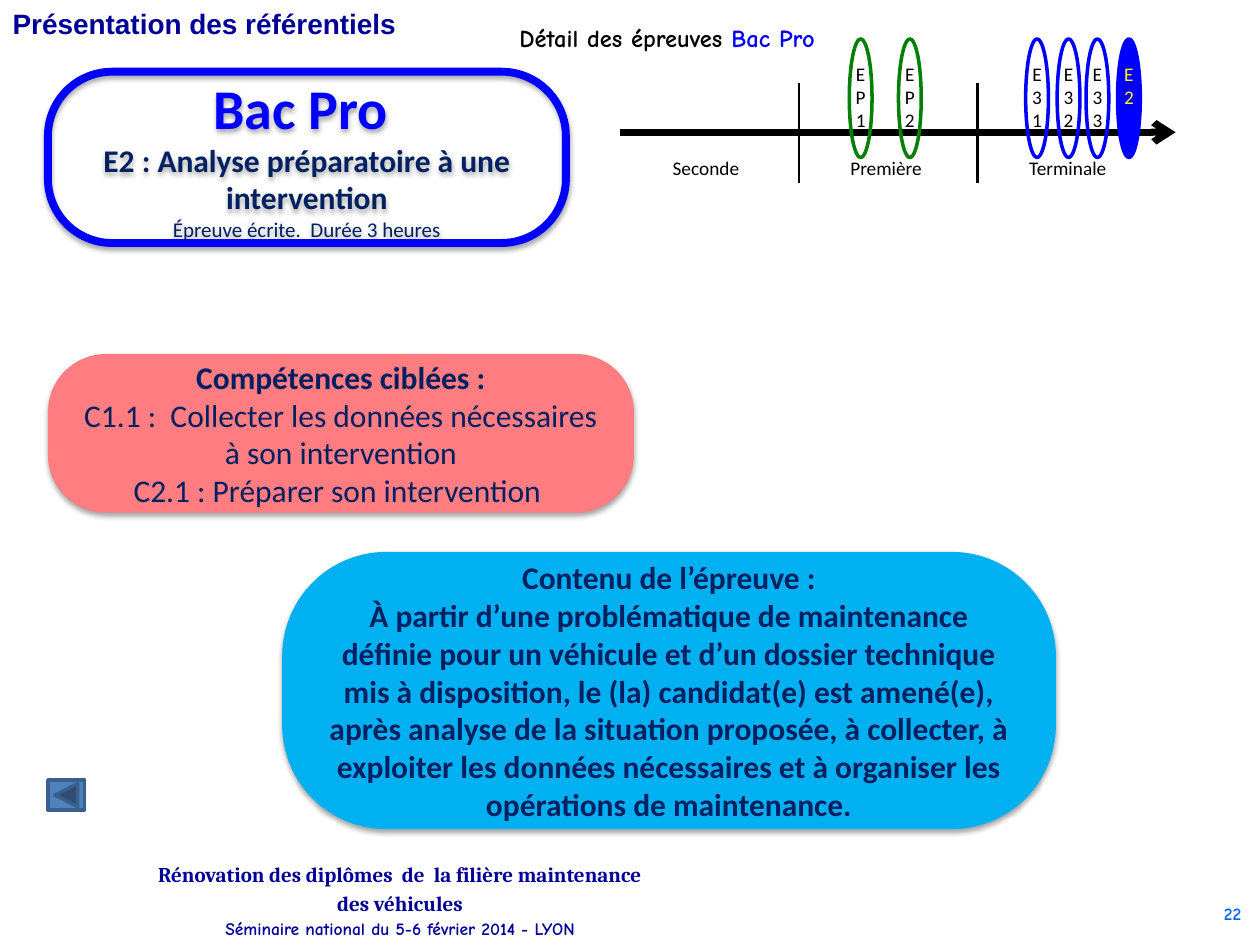
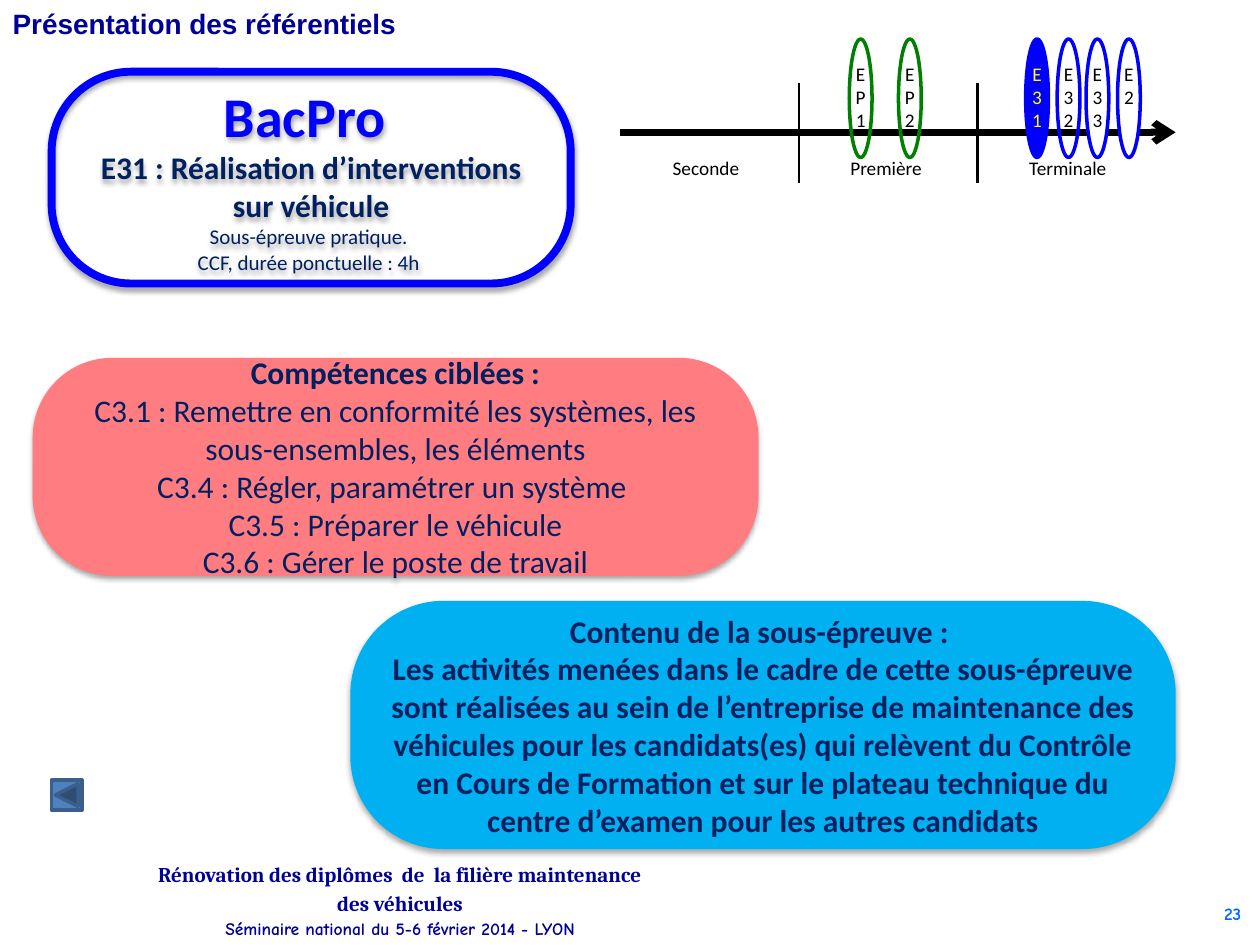
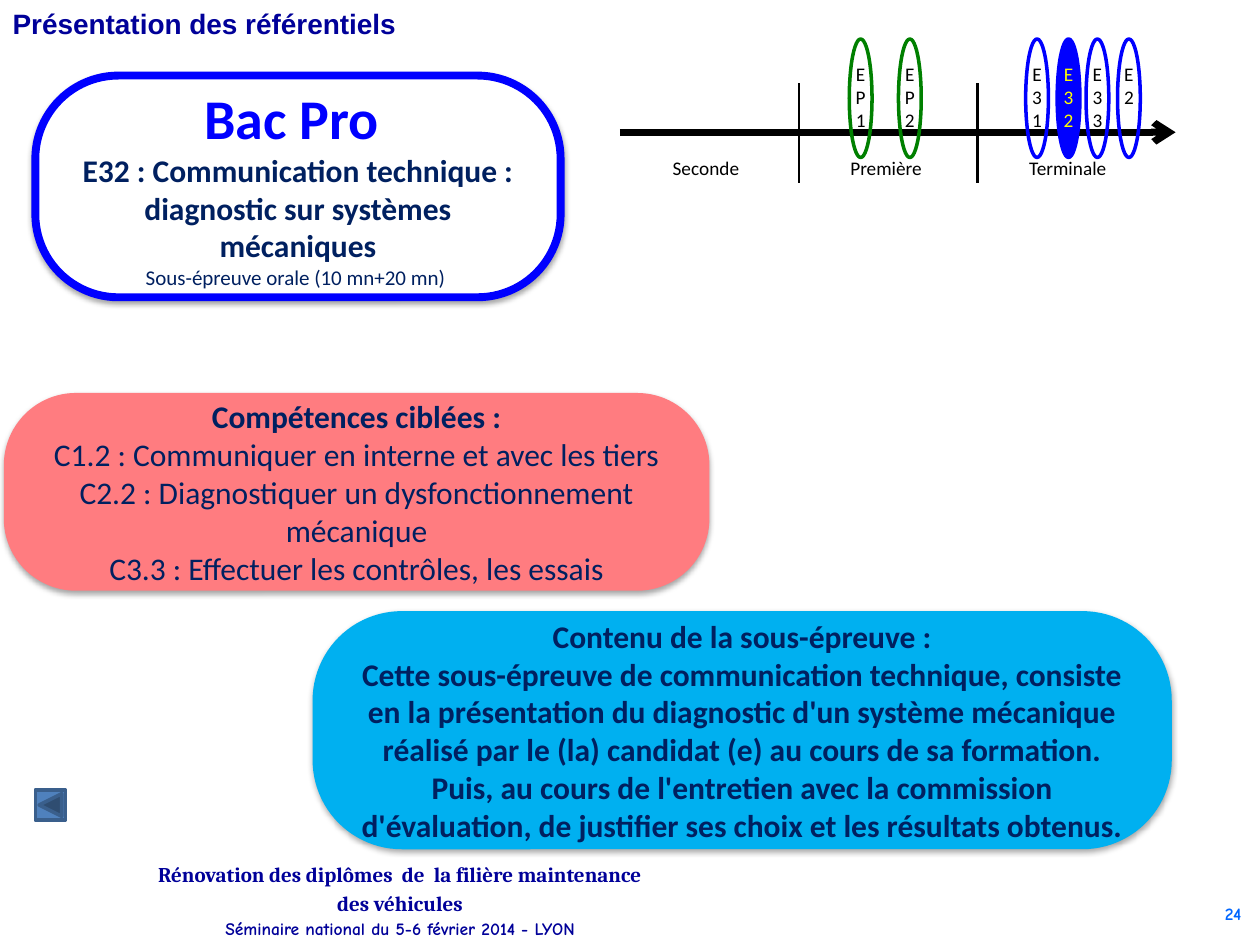
import pptx
import pptx.util
import pptx.dml.color
import pptx.enum.shapes
import pptx.enum.text
import pptx.oxml
import pptx.oxml.ns
from dataclasses import dataclass, replace

Pt = pptx.util.Pt
SHAPE = pptx.enum.shapes.MSO_SHAPE
ALIGN = pptx.enum.text.PP_ALIGN
ANCHOR = pptx.enum.text.MSO_ANCHOR


@dataclass(frozen=True)
class Style:
    size: float
    font: str
    color: str
    bold: bool = False


class Theme:
    blue, green, black, white = "0000FF", "008000", "000000", "FFFFFF"
    pink, cyan = "FF7C80", "00B0F0"
    button, button_line = "4F81BD", "3A5F8C"
    title = Style(16, "Arial", "000099", True)
    footer = Style(12, "Cambria", "000099", True)
    footer_date = Style(10, "Comic Neue", "000099", True)
    number = Style(10, "Comic Neue", "0066FF", True)
    diploma = Style(32, "Calibri", blue, True)
    strong = Style(18, "Calibri", "002060", True)
    plain = replace(strong, bold=False)
    small = replace(plain, size=12)
    label = Style(11, "Calibri", black)
    selected = replace(label, color="FFFF00")
    detail = Style(14, "Comic Neue", black, True)
    detail_blue = replace(detail, color=blue)


SHADOW = (
    '<a:effectLst %s><a:outerShdw blurRad="40000" dist="23000" dir="5400000" rotWithShape="0">'
    '<a:srgbClr val="000000"><a:alpha val="35000"/></a:srgbClr></a:outerShdw></a:effectLst>'
    % pptx.oxml.ns.nsdecls("a"))

# Exams on the timeline: name, left, outline
EXAMS = [("E2", 638.6, Theme.blue), ("E31", 586.1, Theme.blue),
         ("E32", 604.1, Theme.blue), ("E33", 620.6, Theme.blue),
         ("EP2", 513.4, Theme.green), ("EP1", 485.3, Theme.green)]
YEARS = [("Seconde", 377.3, 57), ("Première", 478.8, 57), ("Terminale", 581, 63)]


def rgb(color):
    return pptx.dml.color.RGBColor.from_string(color)


def format_run(r, style):
    r.font.size = Pt(style.size)
    r.font.name = style.font
    r.font.bold = style.bold
    r.font.color.rgb = rgb(style.color)


class Deck:
    def __init__(self, theme):
        self.theme = theme
        self.prs = pptx.Presentation()
        self.prs.slide_width, self.prs.slide_height = Pt(720), Pt(540)
        self.s = None

    # Text
    def set_lines(self, sp, lines, align=ALIGN.CENTER, anchor=ANCHOR.TOP, spacing=None):
        tf = sp.text_frame
        tf.word_wrap = True
        tf.vertical_anchor = anchor
        tf.text = "\n".join(text for text, _ in lines)
        for p, (_, style) in zip(tf.paragraphs, lines):
            p.alignment = align
            if spacing:
                p.line_spacing = spacing
            for r in p.runs:
                format_run(r, style)
        return tf

    def text(self, box, lines, **layout):
        return self.set_lines(self.s.shapes.add_textbox(*map(Pt, box)), lines, **layout)

    # Shapes
    def shape(self, kind, box, fill=None, line=None, width=2.0):
        sp = self.s.shapes.add_shape(kind, *map(Pt, box))
        sp.shadow.inherit = False
        if fill:
            sp.fill.solid()
            sp.fill.fore_color.rgb = rgb(fill)
        else:
            sp.fill.background()
        if line:
            sp.line.color.rgb = rgb(line)
            sp.line.width = Pt(width)
        else:
            sp.line.fill.background()
        return sp

    def card(self, box, lines, fill=None, line=None, rounding=0.375):
        sp = self.shape(SHAPE.ROUNDED_RECTANGLE, box, fill, line, 4.5)
        sp.adjustments[0] = rounding
        spPr = sp._element.spPr
        spPr.replace(spPr.find(pptx.oxml.ns.qn("a:effectLst")), pptx.oxml.parse_xml(SHADOW))
        self.set_lines(sp, lines, anchor=ANCHOR.MIDDLE)

    def line(self, x1, y1, x2, y2, width, arrow=False):
        c = self.s.shapes.add_connector(pptx.enum.shapes.MSO_CONNECTOR.STRAIGHT,
                                        Pt(x1), Pt(y1), Pt(x2), Pt(y2))
        c.line.color.rgb = rgb(self.theme.black)
        c.line.width = Pt(width)
        spPr = c._element.spPr
        if arrow:
            ln = spPr.find(pptx.oxml.ns.qn("a:ln"))
            ln.append(pptx.oxml.parse_xml('<a:tailEnd %s type="arrow"/>' % pptx.oxml.ns.nsdecls("a")))
        spPr.append(pptx.oxml.parse_xml("<a:effectLst %s/>" % pptx.oxml.ns.nsdecls("a")))

    # Title, footer and page number
    def new_slide(self, number):
        t = self.theme
        self.s = self.prs.slides.add_slide(self.prs.slide_layouts[5])
        title = self.s.shapes.title
        title.left, title.top, title.width, title.height = Pt(0), Pt(0), Pt(235.4), Pt(26.6)
        tf = self.set_lines(title, [("Présentation des référentiels", t.title)], align=ALIGN.LEFT)
        tf.auto_size = pptx.enum.text.MSO_AUTO_SIZE.NONE
        self.text((673.2, 512.6, 43.2, 23), [(str(number), t.number)], align=ALIGN.RIGHT)
        self.text((82.1, 493.2, 293, 40.3),
                  [("Rénovation des diplômes  de  la filière maintenance des véhicules", t.footer),
                   ("Séminaire national du 5-6 février 2014 - LYON", t.footer_date)],
                  anchor=ANCHOR.MIDDLE, spacing=1.15)

    # Three-year timeline with the current exam filled in
    def timeline(self, current, opaque=()):
        t = self.theme
        self.line(354.2, 75.6, 671.8, 75.6, 4, arrow=True)
        for x in (456.5, 558.7):
            self.line(x, 47.5, x, 104.4, 1.5)
        for year, x, width in YEARS:
            self.text((x, 85.7, width, 20.9), [(year, t.label)], align=ALIGN.LEFT)
        for exam, x, outline in EXAMS:
            fill = t.blue if exam == current else t.white if exam in opaque else None
            sp = self.shape(SHAPE.OVAL, (x, 22.3, 13, 67.7), fill, outline)
            tf = self.set_lines(sp, [(exam, t.selected if exam == current else t.label)])
            tf.margin_left = tf.margin_right = 0

    # The three cards of an exam
    def exam(self, diploma, name, terms, skills, content, boxes, fill=None):
        t = self.theme
        head_box, skills_box, content_box = boxes
        self.card(head_box, [(diploma, t.diploma), (name, t.strong)]
                  + [(term, t.small) for term in terms], fill, t.blue)
        self.card(skills_box, [("Compétences ciblées :", t.strong)]
                  + [(skill, t.plain) for skill in skills], t.pink, rounding=0.365)
        self.card(content_box, [(text, t.strong) for text in content], t.cyan)

    def back_button(self, x, y, width=17.3):
        self.shape(SHAPE.ACTION_BUTTON_BACK_OR_PREVIOUS, (x, y, width, 17.3),
                   self.theme.button, self.theme.button_line)

    def detail(self, text, diploma):
        tf = self.text((277.2, 9.4, 208.1, 24.5), [(text, self.theme.detail)])
        tf.word_wrap = False
        r = tf.paragraphs[0].add_run()
        r.text = diploma
        format_run(r, self.theme.detail_blue)


def main():
    deck = Deck(Theme)

    # E2
    deck.new_slide(22)
    deck.exam(
        "Bac Pro ", "E2 : Analyse préparatoire à une intervention",
        ["Épreuve écrite.  Durée 3 heures"],
        ["C1.1 :  Collecter les données nécessaires à son intervention",
         "C2.1 : Préparer son intervention "],
        ["Contenu de l’épreuve :",
         "À partir d’une problématique de maintenance définie pour un véhicule et d’un dossier "
         "technique mis à disposition, le (la) candidat(e) est amené(e), après analyse de la "
         "situation proposée, à collecter, à exploiter les données nécessaires et à organiser "
         "les opérations de maintenance."],
        [(27.4, 41, 296, 97.9), (27.4, 202.3, 334.8, 90.7), (161.3, 315.4, 442.1, 158.4)])
    deck.timeline("E2")
    deck.back_button(27.4, 445.7, 20.9)
    deck.detail("Détail des épreuves ", "Bac Pro")

    # E31
    deck.new_slide(23)
    deck.exam(
        "BacPro ", "E31 : Réalisation d’interventions sur véhicule",
        ["Sous-épreuve pratique. ", "CCF, durée ponctuelle : 4h "],
        ["C3.1 : Remettre en conformité les systèmes, les sous-ensembles, les éléments",
         "C3.4 : Régler, paramétrer un système ",
         "C3.5 : Préparer le véhicule",
         "C3.6 : Gérer le poste de travail"],
        ["Contenu de la sous-épreuve : ",
         "Les activités menées dans le cadre de cette sous-épreuve sont réalisées au sein de "
         "l’entreprise de maintenance des véhicules pour les candidats(es) qui relèvent du "
         "Contrôle en Cours de Formation et sur le plateau technique du centre d’examen pour "
         "les autres candidats"],
        [(29.5, 41, 296.6, 121), (18.7, 204.5, 414.7, 124.6), (200.2, 343.4, 471.6, 141.8)])
    deck.back_button(29.5, 445.7)
    deck.timeline("E31", opaque=("E2", "E33"))

    # E32
    deck.new_slide(24)
    deck.exam(
        "Bac Pro ", "E32 : Communication technique : diagnostic sur systèmes mécaniques",
        ["Sous-épreuve orale (10 mn+20 mn) "],
        ["C1.2 : Communiquer en interne et avec les tiers",
         "C2.2 : Diagnostiquer un dysfonctionnement mécanique",
         "C3.3 : Effectuer les contrôles, les essais"],
        ["Contenu de la sous-épreuve :",
         "Cette sous-épreuve de communication technique, consiste en la présentation du "
         "diagnostic d'un système mécanique réalisé par le (la) candidat (e) au cours de sa "
         "formation. Puis, au cours de l'entretien avec la commission d'évaluation, de "
         "justifier ses choix et les résultats obtenus."],
        [(20.2, 43.2, 300.2, 126.7), (2.2, 224.6, 403.2, 113), (178.6, 349.2, 491, 136.1)],
        fill=Theme.white)
    deck.back_button(20.2, 451.4)
    deck.timeline("E32")

    deck.prs.save("out.pptx")


if __name__ == "__main__":
    main()
